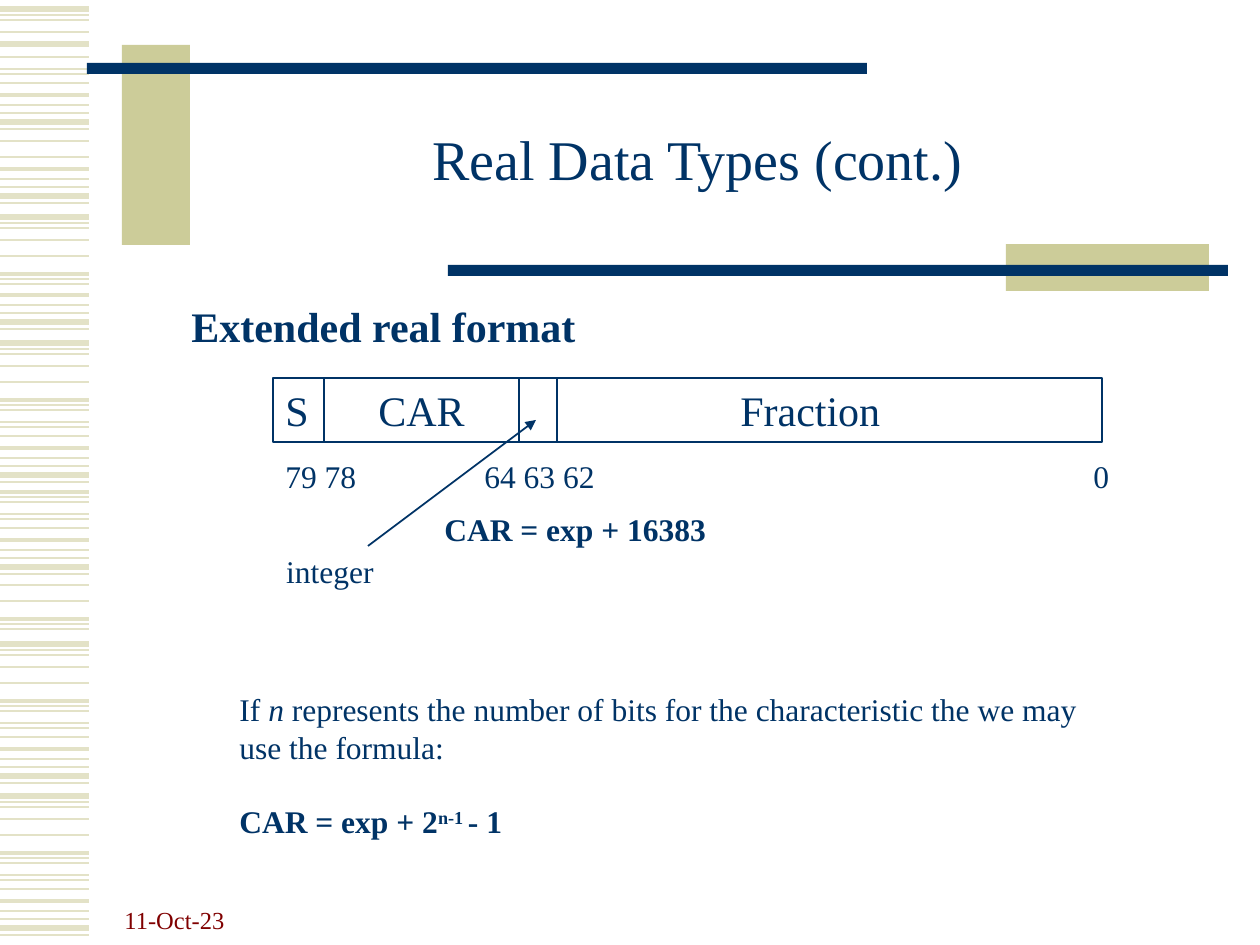
"""Build the slide on the extended real format."""
from dataclasses import dataclass

from pptx import Presentation
from pptx.dml.color import RGBColor
from pptx.enum.shapes import MSO_CONNECTOR, MSO_SHAPE
from pptx.enum.text import MSO_ANCHOR, MSO_AUTO_SIZE, PP_ALIGN
from pptx.oxml.ns import qn
from pptx.oxml.xmlchemy import OxmlElement
from pptx.util import Pt

PX = 914400 // 126
NAVY, KHAKI, PALE, MAROON = "003366", "CCCC99", "E3E2C7", "800000"
FONT = "Times New Roman"


@dataclass(frozen=True)
class Area:
    left: int
    top: int
    width: int
    height: int

    def emu(self) -> list[int]:
        return [n * PX for n in (self.left, self.top, self.width, self.height)]


@dataclass(frozen=True)
class Stripe:
    offset: int
    weight: float


@dataclass(frozen=True)
class StripeRun:
    start: int
    first: int
    last: int


@dataclass(frozen=True)
class Block:
    area: Area
    color: str


@dataclass(frozen=True)
class Field:
    text: str
    area: Area
    align: PP_ALIGN


@dataclass(frozen=True)
class Label:
    text: str
    area: Area
    size: int = 18
    bold: bool = False
    color: str = NAVY
    align: PP_ALIGN = PP_ALIGN.LEFT
    anchor: MSO_ANCHOR = MSO_ANCHOR.TOP
    wrap: bool = True


PATTERN = [
    Stripe(0, 3), Stripe(6, 0.75), Stripe(11, 1), Stripe(23, 1),
    Stripe(39, 1), Stripe(57, 2.25), Stripe(62, 0.75), Stripe(67, 1.5),
    Stripe(79, 0.75), Stripe(84, 1.5), Stripe(93, 1), Stripe(105, 2.25),
    Stripe(115, 1.5), Stripe(123, 0.75), Stripe(132, 3), Stripe(139, 1.5),
]
STRIPE_RUNS = [
    StripeRun(9, 0, 3), StripeRun(44, 0, 0), StripeRun(-10, 7, 15),
    StripeRun(102, 4, 4), StripeRun(64, 10, 15), StripeRun(217, 0, 7),
    StripeRun(190, 11, 15), StripeRun(343, 0, 15), StripeRun(435, 5, 15),
    StripeRun(562, 3, 7), StripeRun(644, 0, 15), StripeRun(796, 0, 15),
]
BLOCKS = [
    Block(Area(122, 45, 68, 200), KHAKI),
    Block(Area(87, 63, 780, 11), NAVY),
    Block(Area(1006, 244, 203, 47), KHAKI),
    Block(Area(448, 265, 780, 11), NAVY),
]
FIELDS = [
    Field("S", Area(273, 378, 51, 64), PP_ALIGN.LEFT),
    Field("CAR", Area(324, 378, 195, 64), PP_ALIGN.CENTER),
    Field("Fraction", Area(519, 378, 583, 64), PP_ALIGN.CENTER),
]
LABELS = [
    Label("11-Oct-23", Area(112, 878, 262, 63), 14, color=MAROON, anchor=MSO_ANCHOR.BOTTOM),
    Label("Extended real format", Area(179, 294, 413, 63), 24, bold=True, wrap=False),
    Label("79 78", Area(273, 451, 126, 50)),
    Label("64 63 62", Area(472, 451, 158, 50)),
    Label("0", Area(1081, 451, 126, 50)),
    Label("CAR = exp + 16383", Area(432, 504, 287, 50), bold=True, wrap=False),
    Label("integer", Area(262, 546, 136, 50), align=PP_ALIGN.CENTER),
]


def rgb(value: str) -> RGBColor:
    return RGBColor.from_string(value)


def add_span(para, text: str, *, size: int = 18, color: str = NAVY,
             bold: bool = False, italic: bool = False, raised: int = 0) -> None:
    span = para.add_run()
    span.text = text
    span.font.name = FONT
    span.font.size = Pt(size)
    span.font.color.rgb = rgb(color)
    span.font.bold = bold
    span.font.italic = italic
    if raised:
        span._r.get_or_add_rPr().set("baseline", str(raised * 1000))


def set_frame(frame, *, anchor: MSO_ANCHOR = MSO_ANCHOR.TOP, wrap: bool = True) -> None:
    frame.word_wrap = wrap
    frame.auto_size = MSO_AUTO_SIZE.NONE
    frame.vertical_anchor = anchor


def add_line(page, start: tuple[int, int], end: tuple[int, int], *,
             color: str = NAVY, weight: float = 1, arrow: bool = False) -> None:
    line = page.shapes.add_connector(
        MSO_CONNECTOR.STRAIGHT, *(n * PX for n in (*start, *end)))
    line.line.color.rgb = rgb(color)
    line.line.width = Pt(weight)
    if arrow:
        head = OxmlElement("a:tailEnd")
        head.set("type", "triangle")
        line.line._get_or_add_ln().append(head)
    line._element.find(qn("p:spPr")).append(OxmlElement("a:effectLst"))


def add_block(page, block: Block) -> None:
    shape = page.shapes.add_shape(MSO_SHAPE.RECTANGLE, *block.area.emu())
    shape.shadow.inherit = False
    shape.fill.solid()
    shape.fill.fore_color.rgb = rgb(block.color)
    shape.line.fill.background()


def add_field(page, field: Field) -> None:
    shape = page.shapes.add_shape(MSO_SHAPE.RECTANGLE, *field.area.emu())
    shape.shadow.inherit = False
    shape.fill.background()
    shape.line.color.rgb = rgb(NAVY)
    shape.line.width = Pt(1)
    set_frame(shape.text_frame)
    para = shape.text_frame.paragraphs[0]
    para.alignment = field.align
    add_span(para, field.text, size=24)


def add_label(page, label: Label) -> None:
    box = page.shapes.add_textbox(*label.area.emu())
    set_frame(box.text_frame, anchor=label.anchor, wrap=label.wrap)
    para = box.text_frame.paragraphs[0]
    para.alignment = label.align
    add_span(para, label.text, size=label.size, color=label.color, bold=label.bold)


def add_title(page, text: str, area: Area) -> None:
    title = page.shapes.title
    title.left, title.top, title.width, title.height = area.emu()
    set_frame(title.text_frame, anchor=MSO_ANCHOR.MIDDLE)
    para = title.text_frame.paragraphs[0]
    para.alignment = PP_ALIGN.CENTER
    para.line_spacing = 0.85
    add_span(para, text, size=32)


def add_formula(page, area: Area) -> None:
    box = page.shapes.add_textbox(*area.emu())
    set_frame(box.text_frame)
    para = box.text_frame.paragraphs[0]
    add_span(para, "If ")
    add_span(para, "n ", italic=True)
    add_span(para, "represents the number of bits for the characteristic "
                   "the we may use the formula:")
    para = box.text_frame.add_paragraph()
    para.space_before = Pt(21)
    add_span(para, "CAR = exp + 2", bold=True)
    add_span(para, "n-1 ", bold=True, raised=30)
    add_span(para, "- 1", bold=True)


def main() -> None:
    deck = Presentation()
    deck.slide_width, deck.slide_height = 1260 * PX, 945 * PX
    page = deck.slides.add_slide(deck.slide_layouts[5])
    for run in STRIPE_RUNS:
        for stripe in PATTERN[run.first:run.last + 1]:
            y = run.start + stripe.offset
            add_line(page, (0, y), (89, y), color=PALE, weight=stripe.weight)
    for block in BLOCKS:
        add_block(page, block)
    add_title(page, "Real Data Types (cont.)", Area(189, 84, 1017, 158))
    for field in FIELDS:
        add_field(page, field)
    for label in LABELS:
        add_label(page, label)
    add_line(page, (557, 378), (557, 441))
    add_line(page, (368, 546), (536, 420), arrow=True)
    add_formula(page, Area(227, 684, 866, 165))
    deck.save("out.pptx")


if __name__ == "__main__":
    main()
